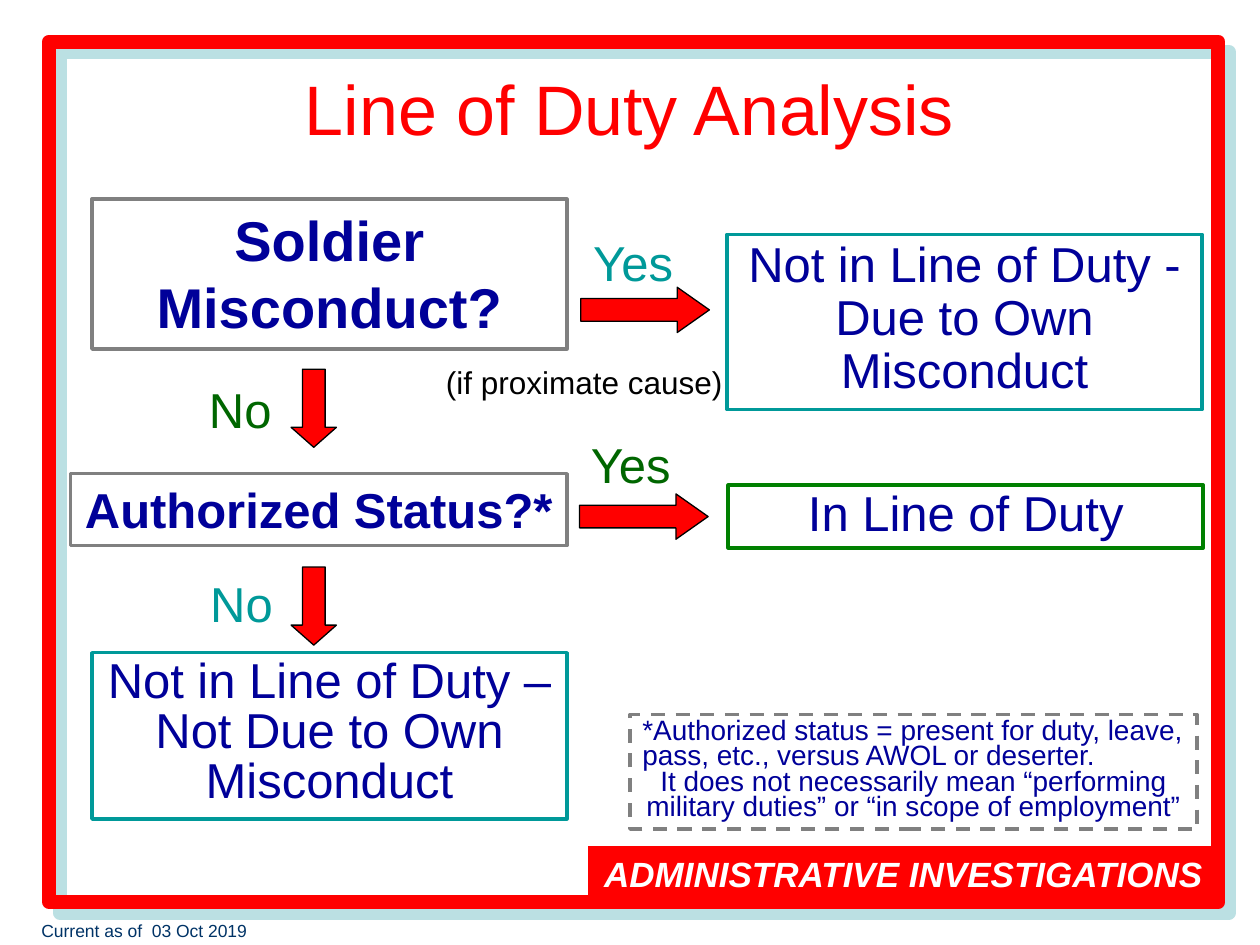
from lxml import etree
from pptx import Presentation
from pptx.dml.color import RGBColor
from pptx.enum import dml, shapes, text
from pptx.oxml import ns
from pptx.util import Inches, Pt

COLORS = {
    "red": "FF0000", "navy": "000099", "teal": "009999", "green": "006600",
    "outline": "008000", "gray": "808080", "ice": "BBE0E3", "slate": "003366",
    "white": "FFFFFF", "black": "000000",
}
LEFT, CENTER = text.PP_ALIGN.LEFT, text.PP_ALIGN.CENTER


def add_box(place, kind=shapes.MSO_SHAPE.RECTANGLE, fill=None, line=None, weight=2):
    box = page.shapes.add_shape(kind, *[Inches(length) for length in place])
    box.shadow.inherit = False
    if fill:
        box.fill.solid()
        box.fill.fore_color.rgb = RGBColor.from_string(COLORS[fill])
    else:
        box.fill.background()
    box.line.color.rgb = RGBColor.from_string(COLORS[line])
    box.line.width = Pt(weight)
    return box


def write(box, lines, size, color, bold=False, italic=False, spacing=None,
          anchor=text.MSO_ANCHOR.TOP):
    frame = box.text_frame
    frame.word_wrap = True
    frame.vertical_anchor = anchor
    for index, (wording, align) in enumerate(lines):
        para = frame.add_paragraph() if index else frame.paragraphs[0]
        para.alignment = align
        if spacing:
            para.line_spacing = spacing
        span = para.add_run()
        span.text = wording
        span.font.name = "Arial"
        span.font.size = Pt(size)
        span.font.bold = bold
        span.font.italic = italic
        span.font.color.rgb = RGBColor.from_string(COLORS[color])


deck = Presentation()
deck.slide_width, deck.slide_height = Inches(10), Inches(7.5)
page = deck.slides.add_slide(deck.slide_layouts[6])

border = add_box((0.39, 0.33, 9.28, 6.83), line="red", weight=8)
effects = border._element.spPr.find(ns.qn("a:effectLst"))
shadow = etree.SubElement(effects, ns.qn("a:outerShdw"), dist=str(Pt(8.5)),
                          dir="2700000", algn="ctr", rotWithShape="0")
etree.SubElement(shadow, ns.qn("a:srgbClr"), val=COLORS["ice"])

banner = add_box((4.67, 6.72, 5, 0.44), fill="red", line="red", weight=0.75)
write(banner, [("ADMINISTRATIVE INVESTIGATIONS", CENTER)], 20, "white", True, True)

title = page.shapes.add_textbox(Inches(1.08), Inches(0.23), Inches(7.83), Inches(1.25))
write(title, [("Line of Duty Analysis", CENTER)], 40, "red", anchor=text.MSO_ANCHOR.MIDDLE)

steps = [
    ((0.73, 1.58, 3.77, 1.19), "gray", "Soldier Misconduct?", 32, True, None),
    ((0.56, 3.76, 3.94, 0.57), "gray", "Authorized Status?*", 28, True, None),
    ((5.77, 1.86, 3.77, 1.39), "teal",
     "Not in Line of Duty - Due to Own Misconduct", 28, False, 0.9),
    ((0.73, 5.18, 3.77, 1.32), "teal",
     "Not in Line of Duty – Not Due to Own Misconduct", 28, False, 0.85),
    ((5.78, 3.85, 3.77, 0.5), "outline", "In Line of Duty", 28, False, 0.85),
]
for place, line, wording, size, bold, spacing in steps:
    step = add_box(place, line=line)
    write(step, [(wording, CENTER)], size, "navy", bold, spacing=spacing)

arrows = [
    (4.61, 2.28, 1.02, 0, 0.71),
    (4.6, 3.92, 1.02, 0, 0.71),
    (2.18, 3.06, 0.62, 90, 0.44),
    (2.18, 4.63, 0.62, 90, 0.44),
]
for left, top, width, turn, head in arrows:
    arrow = add_box((left, top, width, 0.36), shapes.MSO_SHAPE.RIGHT_ARROW,
                    "red", "black", 0.75)
    arrow.rotation = turn
    arrow.adjustments[0], arrow.adjustments[1] = 0.5, head

note = add_box((5, 5.67, 4.5, 0.91), line="gray")
note.line.dash_style = dml.MSO_LINE.DASH
write(note, [
    ("*Authorized status = present for duty, leave, pass, etc., versus AWOL or deserter.", LEFT),
    ("It does not necessarily mean “performing military duties” or “in scope of employment”",
     CENTER),
], 16, "navy", spacing=0.75)

labels = [
    ((4.61, 1.8, 0.91, 0.57), "Yes", 28, "teal"),
    ((4.59, 3.4, 0.91, 0.57), "Yes", 28, "green"),
    ((1.56, 2.96, 0.91, 0.57), "No", 28, "green"),
    ((1.57, 4.5, 0.91, 0.57), "No", 28, "teal"),
    ((3.44, 2.83, 2.42, 0.4), "(if proximate cause)", 18, "black"),
    ((0.23, 7.25, 2.18, 0.27), "Current as of  03 Oct 2019", 10, "slate"),
]
for place, wording, size, color in labels:
    label = page.shapes.add_textbox(*[Inches(length) for length in place])
    write(label, [(wording, LEFT)], size, color)

deck.save("out.pptx")
